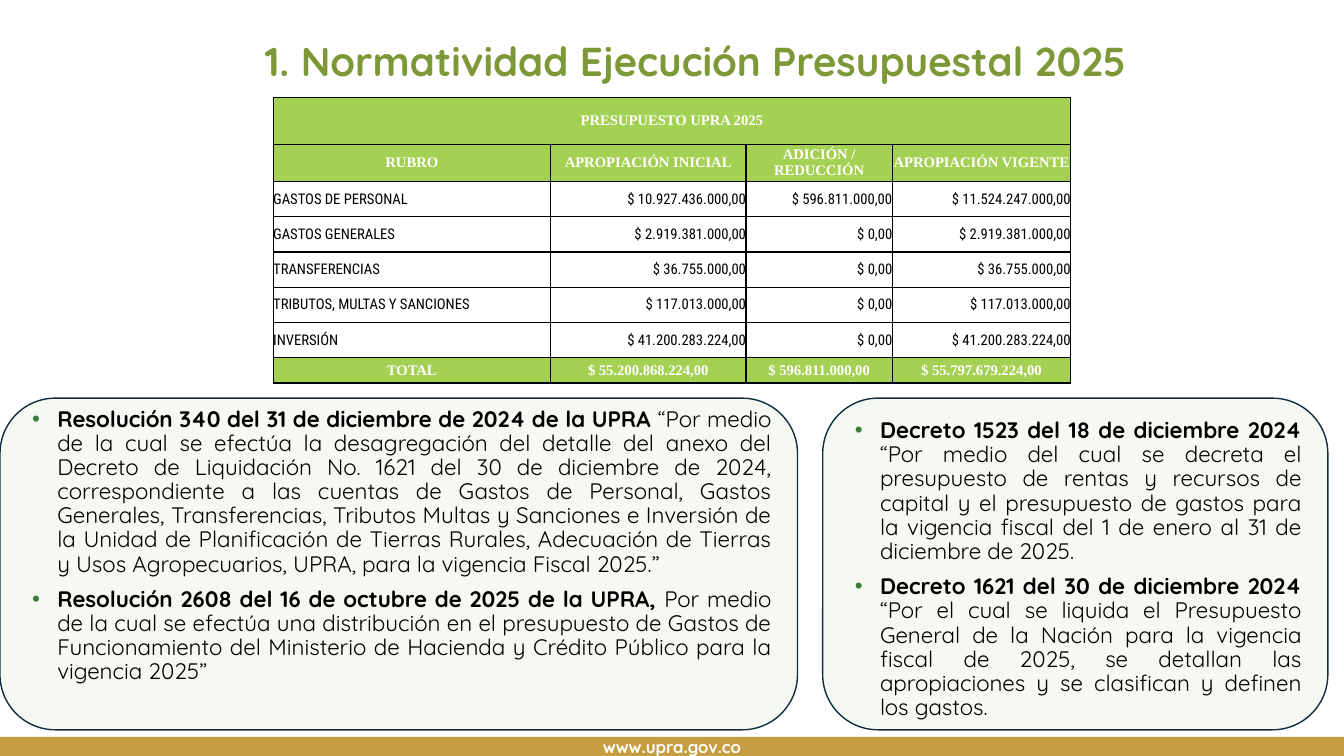
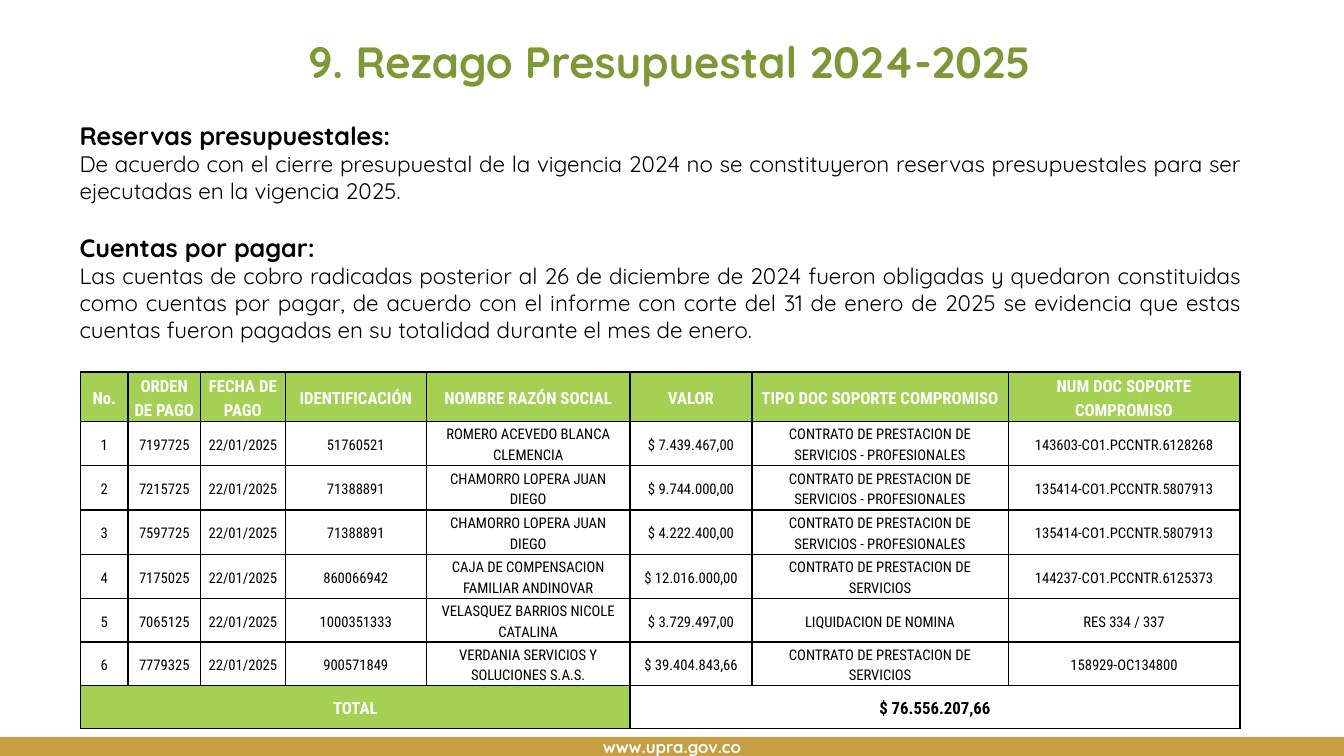
import pptx
import pptx.util
import pptx.dml.color
import pptx.enum.shapes
import pptx.enum.text
import pptx.oxml.ns
import lxml.etree

Inches = pptx.util.Inches
Pt = pptx.util.Pt
Align = pptx.enum.text.PP_ALIGN
Anchor = pptx.enum.text.MSO_ANCHOR
Shape = pptx.enum.shapes.MSO_SHAPE
qn = pptx.oxml.ns.qn
color = pptx.dml.color.RGBColor.from_string

WHITE, BLACK = "FFFFFF", "000000"
TITLE_GREEN, TABLE_GREEN, BULLET_GREEN, PANEL_GREEN = "7D9837", "A4D153", "397C3C", "E2F0D9"
GOLD, NAVY = "C59E41", "0F2F41"
HEADING_FONT, TABLE_FONT, SERIF_FONT = "Quicksand", "Roboto Condensed", "Times New Roman"


def write_paragraph(paragraph, runs, ink, layout):
    for name, value in layout.items():
        setattr(paragraph, name, value)
    for text, font_format in runs:
        run = paragraph.add_run()
        run.text = text
        for name, value in font_format.items():
            setattr(run.font, name, value)
        run.font.color.rgb = color(ink)


def add_grid(slide, left, top, widths, heights, rows, style_cell):
    frame = slide.shapes.add_table(
        len(heights), len(widths), Inches(left), Inches(top),
        Inches(sum(widths)), Inches(sum(heights)))
    table = frame.table
    table.first_row = table.horz_banding = False
    for column, width in zip(table.columns, widths):
        column.width = Inches(width)
    for row_index, height in enumerate(heights):
        table.rows[row_index].height = Inches(height)
        for column_index in range(len(widths)):
            cell = table.cell(row_index, column_index)
            text = rows[row_index][column_index]
            style = style_cell(row_index, column_index)
            cell.vertical_anchor = Anchor.MIDDLE
            cell.margin_top = cell.margin_bottom = 0
            cell.margin_left = cell.margin_right = Inches(style["margin"])
            properties = cell._tc.get_or_add_tcPr()
            for side in ("a:lnL", "a:lnR", "a:lnT", "a:lnB"):
                border = lxml.etree.SubElement(properties, qn(side), w=str(Pt(1)))
                fill = lxml.etree.SubElement(border, qn("a:solidFill"))
                lxml.etree.SubElement(fill, qn("a:srgbClr"), val=BLACK)
            if style["filled"]:
                cell.fill.solid()
                cell.fill.fore_color.rgb = color(TABLE_GREEN)
            else:
                cell.fill.background()
            if text:
                write_paragraph(cell.text_frame.paragraphs[0], [(text, style["font"])],
                                style["ink"], style["layout"])
    return table


presentation = pptx.Presentation()
presentation.slide_width = Inches(13.33)
presentation.slide_height = Inches(7.5)
title_layout = presentation.slide_layouts.get_by_name("Title Only")

titles = [
    ("1. Normatividad Ejecución Presupuestal 2025", 28.8, (2.21, 0.36, 9.38, 1.03)),
    ("9. Rezago Presupuestal 2024-2025", 31.2, (0.92, 0.35, 11.44, 0.87)),
]
for text, size, box in titles:
    title = presentation.slides.add_slide(title_layout).shapes.title
    title.left, title.top, title.width, title.height = map(Inches, box)
    title.text_frame.vertical_anchor = Anchor.TOP
    title.text_frame.auto_size = pptx.enum.text.MSO_AUTO_SIZE.NONE
    write_paragraph(title.text_frame.paragraphs[0],
                    [(text, {"name": HEADING_FONT, "size": Pt(size), "bold": True})],
                    TITLE_GREEN, {"alignment": Align.CENTER, "line_spacing": 0.9})
rules_slide, arrears_slide = presentation.slides

band = rules_slide.shapes.add_shape(
    Shape.RECTANGLE, 0, Inches(7.31), presentation.slide_width, Inches(0.19))
band.shadow.inherit = False
band.fill.solid()
band.fill.fore_color.rgb = color(GOLD)
band.line.fill.background()
band.text_frame.vertical_anchor = Anchor.MIDDLE
write_paragraph(band.text_frame.paragraphs[0],
                [("www.upra.gov.co", {"name": HEADING_FONT, "size": Pt(12), "bold": True})],
                WHITE, {"alignment": Align.CENTER})
band.element.nvSpPr.cNvPr.set("id", "20")
presentation.slide_master.shapes.element.append(band.element)

panels = [
    (8.16, 5.01, Anchor.TOP, 0.05, [
        ("Decreto 1523 del 18 de diciembre 2024 ",
         "“Por medio del cual se decreta el presupuesto de rentas y recursos de capital y el "
         "presupuesto de gastos para la vigencia fiscal del 1 de enero al 31 de diciembre de 2025."),
        ("Decreto 1621 del 30 de diciembre 2024 ",
         "“Por el cual se liquida el Presupuesto General de la Nación para la vigencia fiscal de "
         "2025, se detallan las apropiaciones y se clasifican y definen los gastos."),
    ]),
    (0, 7.91, Anchor.MIDDLE, 0.4, [
        ("Resolución 340 del 31 de diciembre de 2024 de la UPRA ",
         "“Por medio de la cual se efectúa la desagregación del detalle del anexo del Decreto de "
         "Liquidación No. 1621 del 30 de diciembre de 2024, correspondiente a las cuentas de "
         "Gastos de Personal, Gastos Generales, Transferencias, Tributos Multas y Sanciones e "
         "Inversión de la Unidad de Planificación de Tierras Rurales, Adecuación de Tierras y "
         "Usos Agropecuarios, UPRA, para la vigencia Fiscal 2025.”"),
        ("Resolución 2608 del 16 de octubre de 2025 de la UPRA, ",
         "Por medio de la cual se efectúa una distribución en el presupuesto de Gastos de "
         "Funcionamiento del Ministerio de Hacienda y Crédito Público para la vigencia 2025”"),
    ]),
]
rule_font = {"name": HEADING_FONT, "size": Pt(16)}
for left, width, anchor, bottom_margin, rules in panels:
    panel = rules_slide.shapes.add_shape(
        Shape.ROUNDED_RECTANGLE, Inches(left), Inches(3.95), Inches(width), Inches(3.29))
    panel.shadow.inherit = False
    panel.fill.solid()
    panel.fill.fore_color.rgb = color(PANEL_GREEN)
    panel_color = panel.element.spPr.find(qn("a:solidFill"))[0]
    lxml.etree.SubElement(panel_color, qn("a:alpha"), val="34000")
    panel.line.color.rgb = color(NAVY)
    panel.line.width = Pt(1)
    text_frame = panel.text_frame
    text_frame.vertical_anchor = anchor
    text_frame.margin_bottom = Inches(bottom_margin)
    for index, (heading, body) in enumerate(rules):
        paragraph = text_frame.add_paragraph() if index else text_frame.paragraphs[0]
        properties = paragraph._p.get_or_add_pPr()
        properties.set("marL", str(Inches(0.31)))
        properties.set("indent", str(Inches(-0.25)))
        bullet_color = lxml.etree.SubElement(properties, qn("a:buClr"))
        lxml.etree.SubElement(bullet_color, qn("a:srgbClr"), val=BULLET_GREEN)
        lxml.etree.SubElement(properties, qn("a:buFont"), typeface="Arial")
        lxml.etree.SubElement(properties, qn("a:buChar"), char="•")
        write_paragraph(
            paragraph,
            [(heading, {**rule_font, "bold": True}), (body, {**rule_font, "bold": False})],
            BLACK, {"alignment": Align.JUSTIFY, "line_spacing": 0.9, "space_after": Pt(8)})

budget_rows = [
    ("PRESUPUESTO UPRA 2025", "", "", ""),
    ("RUBRO", "APROPIACIÓN INICIAL", "ADICIÓN / REDUCCIÓN", "APROPIACIÓN VIGENTE"),
    ("GASTOS DE PERSONAL", "$ 10.927.436.000,00", "$ 596.811.000,00", "$ 11.524.247.000,00"),
    ("GASTOS GENERALES", "$ 2.919.381.000,00", "$ 0,00", "$ 2.919.381.000,00"),
    ("TRANSFERENCIAS", "$ 36.755.000,00", "$ 0,00", "$ 36.755.000,00"),
    ("TRIBUTOS, MULTAS Y SANCIONES", "$ 117.013.000,00", "$ 0,00", "$ 117.013.000,00"),
    ("INVERSIÓN", "$ 41.200.283.224,00", "$ 0,00", "$ 41.200.283.224,00"),
    ("TOTAL", "$ 55.200.868.224,00", "$ 596.811.000,00", "$ 55.797.679.224,00"),
]


def style_cell(row, column, budget=True):
    if budget:
        filled = strong = row in (0, 1, 7)
        alignment = Align.CENTER if filled else Align.RIGHT if column else Align.LEFT
        layout = {"alignment": alignment}
        size, name = 10.5, SERIF_FONT if filled else TABLE_FONT
    else:
        strong = row in (0, 7)
        filled = row == 0 or row == 7 and column < 5
        layout = {"alignment": Align.CENTER, "line_spacing": 1.2, "space_after": Pt(10)}
        size, name = 12 if strong else 10.5, TABLE_FONT
    return {"filled": filled, "margin": 0 if budget else 0.04, "layout": layout,
            "ink": WHITE if filled else BLACK,
            "font": {"name": name, "size": Pt(size), "bold": strong}}


budget_table = add_grid(rules_slide, 2.71, 0.97, [2.75, 1.94, 1.45, 1.77],
                        [0.46, 0.37] + [0.35] * 5 + [0.25], budget_rows, style_cell)
budget_table.cell(0, 0).merge(budget_table.cell(0, 3))

services = "CONTRATO DE PRESTACION DE SERVICIOS"
professional = services + " - PROFESIONALES"
payments = [
    ("7197725", "51760521", "ROMERO ACEVEDO BLANCA CLEMENCIA", "$ 7.439.467,00",
     professional, "143603-CO1.PCCNTR.6128268"),
    ("7215725", "71388891", "CHAMORRO LOPERA JUAN DIEGO", "$ 9.744.000,00",
     professional, "135414-CO1.PCCNTR.5807913"),
    ("7597725", "71388891", "CHAMORRO LOPERA JUAN DIEGO", "$ 4.222.400,00",
     professional, "135414-CO1.PCCNTR.5807913"),
    ("7175025", "860066942", "CAJA DE COMPENSACION FAMILIAR ANDINOVAR", "$ 12.016.000,00",
     services, "144237-CO1.PCCNTR.6125373"),
    ("7065125", "1000351333", "VELASQUEZ BARRIOS NICOLE CATALINA", "$ 3.729.497,00",
     "LIQUIDACION DE NOMINA", "RES 334 / 337"),
    ("7779325", "900571849", "VERDANIA SERVICIOS Y SOLUCIONES S.A.S.", "$ 39.404.843,66",
     services, "158929-OC134800"),
]
payment_rows = [("No.", "ORDEN DE PAGO", "FECHA DE PAGO", "IDENTIFICACIÓN", "NOMBRE RAZÓN SOCIAL",
                 "VALOR", "TIPO DOC SOPORTE COMPROMISO", "NUM DOC SOPORTE COMPROMISO")]
for number, (order, *details) in enumerate(payments, 1):
    payment_rows.append((str(number), order, "22/01/2025", *details))
payment_rows.append(("TOTAL", "", "", "", "", "$ 76.556.207,66", "", ""))
payment_table = add_grid(
    arrears_slide, 0.8, 3.69, [0.47, 0.72, 0.84, 1.4, 2.02, 1.21, 2.54, 2.3],
    [0.49] + [0.44] * 4 + [0.43] * 3, payment_rows,
    lambda row, column: style_cell(row, column, budget=False))
payment_table.cell(7, 0).merge(payment_table.cell(7, 4))
payment_table.cell(7, 5).merge(payment_table.cell(7, 7))

arrears_text = [
    ("Reservas presupuestales:", True, 0),
    ("De acuerdo con el cierre presupuestal de la vigencia 2024 no se constituyeron reservas "
     "presupuestales para ser ejecutadas en la vigencia 2025.", False, 20),
    ("Cuentas por pagar:", True, 0),
    ("Las cuentas de cobro radicadas posterior al 26 de diciembre de 2024 fueron obligadas y "
     "quedaron constituidas como cuentas por pagar, de acuerdo con el informe con corte del 31 de "
     "enero de 2025 se evidencia que estas cuentas fueron pagadas en su totalidad durante el mes "
     "de enero.", False, 0),
]
text_frame = arrears_slide.shapes.add_textbox(
    Inches(0.69), Inches(1.14), Inches(11.72), Inches(2.32)).text_frame
text_frame.word_wrap = True
for index, (text, heading, space_after) in enumerate(arrears_text):
    paragraph = text_frame.add_paragraph() if index else text_frame.paragraphs[0]
    font_format = {"name": HEADING_FONT, "size": Pt(18 if heading else 16), "bold": heading}
    write_paragraph(paragraph, [(text, font_format)], BLACK,
                    {"alignment": Align.JUSTIFY, "space_after": Pt(space_after)})

presentation.save("out.pptx")
